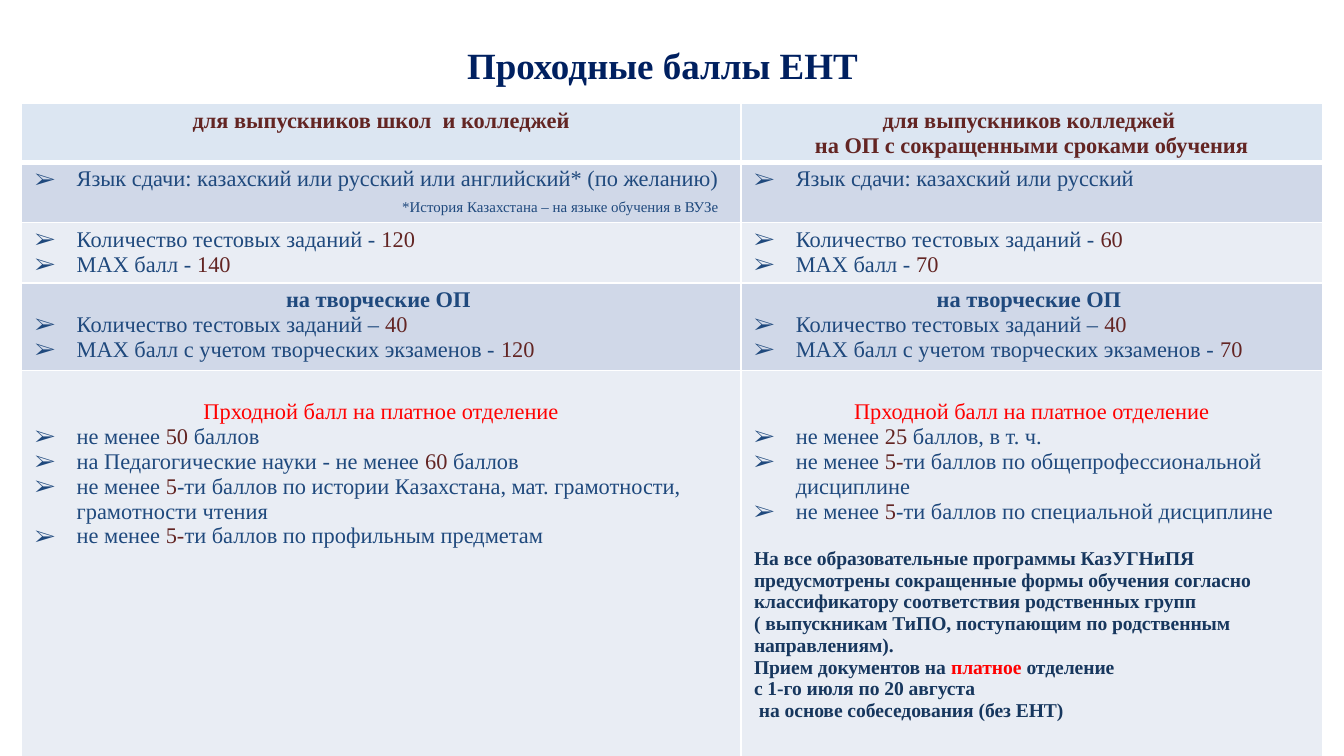
from lxml import etree
from pptx import Presentation
from pptx import util as u
from pptx.dml.color import RGBColor
from pptx.enum import text
from pptx.oxml.ns import qn

TITLE = "Проходные баллы ЕНТ"

# Each line is (kind, run, run, ...): runs alternate between base and accent colour.
CREATIVE = [
    ("heading", "на творческие ОП "),
    ("bullet", "Количество тестовых заданий – ", "40"),
]
PAID = ("alert", "Прходной балл на платное отделение")
ROWS = [
    (
        [("header", "для выпускников школ  и колледжей")],
        [("header", "для выпускников колледжей "),
         ("header", "на ОП с сокращенными сроками обучения")],
    ),
    (
        [("bullet", "Язык сдачи: казахский или русский или английский* (по желанию)"),
         ("footnote", "*История Казахстана – на языке обучения в ВУЗе")],
        [("bullet", "Язык сдачи: казахский или русский")],
    ),
    (
        [("bullet", "Количество тестовых заданий - ", "120"),
         ("bullet", "MAX балл - ", "140")],
        [("bullet", "Количество тестовых заданий - ", "60"),
         ("bullet", "MAX балл - ", "70")],
    ),
    (
        CREATIVE + [("bullet", "MAX балл с учетом творческих экзаменов - ", "120")],
        CREATIVE + [("bullet", "MAX балл с учетом творческих экзаменов - ", "70")],
    ),
    (
        [PAID,
         ("bullet", "не менее ", "50", " баллов"),
         ("bullet", "на Педагогические науки - не менее ", "60 ", "баллов"),
         ("bullet", "не менее ", "5",
          "-ти баллов по истории Казахстана, мат. грамотности, грамотности чтения"),
         ("bullet", "не менее ", "5-", "ти баллов по профильным предметам")],
        [PAID,
         ("bullet", "не менее ", "25", " баллов, в т. ч."),
         ("bullet", "не менее ", "5-", "ти баллов по общепрофессиональной дисциплине"),
         ("bullet", "не менее ", "5", "-ти баллов по специальной дисциплине"),
         ("first_note", "На все образовательные программы КазУГНиПЯ предусмотрены "
          "сокращенные формы обучения согласно классификатору соответствия "
          "родственных групп"),
         ("note", "( выпускникам ТиПО, поступающим по родственным направлениям)."),
         ("note", "Прием документов на ", "платное", " отделение"),
         ("note", "с 1-го июля по 20 августа"),
         ("note", " на основе собеседования (без ЕНТ)")],
    ),
]
COLUMN_WIDTHS = [13.59, 11]
ROW_HEIGHTS = [1.1, 1.14, 1.14, 1.66, 8.09]

CENTER, LEFT = text.PP_ALIGN.CENTER, text.PP_ALIGN.LEFT
BLUE, BROWN, RED, NAVY = "1F497D", "632523", "FF0000", "17375E"
NOTE = dict(size=10.5, color=NAVY, accent=RED, bold=True)
THEME = {
    "font": "Times New Roman",
    "header_fill": "DCE6F2",
    "band_fills": ["D0D8E8", "E9EDF4"],
    "border": "FFFFFF",
    "title": dict(size=19.8, color="002060", bold=True, align=CENTER),
    "header": dict(size=12, color=BROWN, bold=True, align=CENTER),
    "heading": dict(size=12, color=BLUE, bold=True, align=CENTER),
    "alert": dict(size=12, color=RED, align=CENTER),
    "bullet": dict(size=12, color=BLUE, accent=BROWN, hanging=0.79),
    "footnote": dict(size=8, color=BLUE, indent=6.94, before=3.6),
    "note": NOTE,
    "first_note": dict(NOTE, before=12.8),
}


def write_lines(frame, lines):
    for number, (kind, *runs) in enumerate(lines):
        style = THEME[kind]
        paragraph = frame.paragraphs[0] if number == 0 else frame.add_paragraph()
        paragraph.alignment = style.get("align", LEFT)
        paragraph.space_before = u.Pt(style.get("before", 0))
        properties = paragraph._p.get_or_add_pPr()
        if "hanging" in style:
            hanging = u.Cm(style["hanging"])
            properties.set("marL", str(hanging))
            properties.set("indent", str(-hanging))
            etree.SubElement(properties, qn("a:buFont"), typeface=THEME["font"])
            etree.SubElement(properties, qn("a:buChar"), char="➢")
        elif "indent" in style:
            properties.set("marL", str(u.Cm(style["indent"])))
        for position, words in enumerate(runs):
            run = paragraph.add_run()
            run.text = words
            font = run.font
            font.name, font.size = THEME["font"], u.Pt(style["size"])
            font.bold = style.get("bold", False)
            color = style["accent"] if position % 2 else style["color"]
            font.color.rgb = RGBColor.from_string(color)


def add_borders(cell, top, bottom):
    """Draw the cell's four borders; must run before its fill is set."""
    properties = cell._tc.get_or_add_tcPr()
    for side, points in (("L", 1), ("R", 1), ("T", top), ("B", bottom)):
        line = etree.SubElement(properties, qn(f"a:ln{side}"), w=str(u.Pt(points)))
        fill = etree.SubElement(line, qn("a:solidFill"))
        etree.SubElement(fill, qn("a:srgbClr"), val=THEME["border"])


def add_title(slide):
    box = slide.shapes.add_textbox(u.Cm(1.09), u.Cm(0.83), u.Cm(22.86), u.Cm(0.79))
    frame = box.text_frame
    frame.word_wrap = True
    frame.vertical_anchor = text.MSO_ANCHOR.MIDDLE
    frame.margin_top = frame.margin_bottom = 0
    write_lines(frame, [("title", TITLE)])


def add_score_table(slide):
    table = slide.shapes.add_table(
        len(ROWS), len(COLUMN_WIDTHS), u.Cm(0.41), u.Cm(1.96),
        u.Cm(sum(COLUMN_WIDTHS)), u.Cm(sum(ROW_HEIGHTS))).table
    for column, width in zip(table.columns, COLUMN_WIDTHS):
        column.width = u.Cm(width)
    last = len(ROWS) - 1
    for index, (row, height, contents) in enumerate(zip(table.rows, ROW_HEIGHTS, ROWS)):
        row.height = u.Cm(height)
        color = THEME["band_fills"][(index - 1) % 2] if index else THEME["header_fill"]
        for cell, lines in zip(row.cells, contents):
            cell.margin_left = cell.margin_right = u.Cm(0.25)
            cell.margin_top = u.Cm(0.55 if index == last else 0.09)
            cell.margin_bottom = 0
            add_borders(cell, top=3 if index == 1 else 1, bottom=1 if index else 3)
            cell.fill.solid()
            cell.fill.fore_color.rgb = RGBColor.from_string(color)
            write_lines(cell.text_frame, lines)


def main():
    presentation = Presentation()
    presentation.slide_width, presentation.slide_height = u.Cm(25.4), u.Cm(14.29)
    slide = presentation.slides.add_slide(presentation.slide_layouts[6])
    add_title(slide)
    add_score_table(slide)
    presentation.save("out.pptx")


if __name__ == "__main__":
    main()
